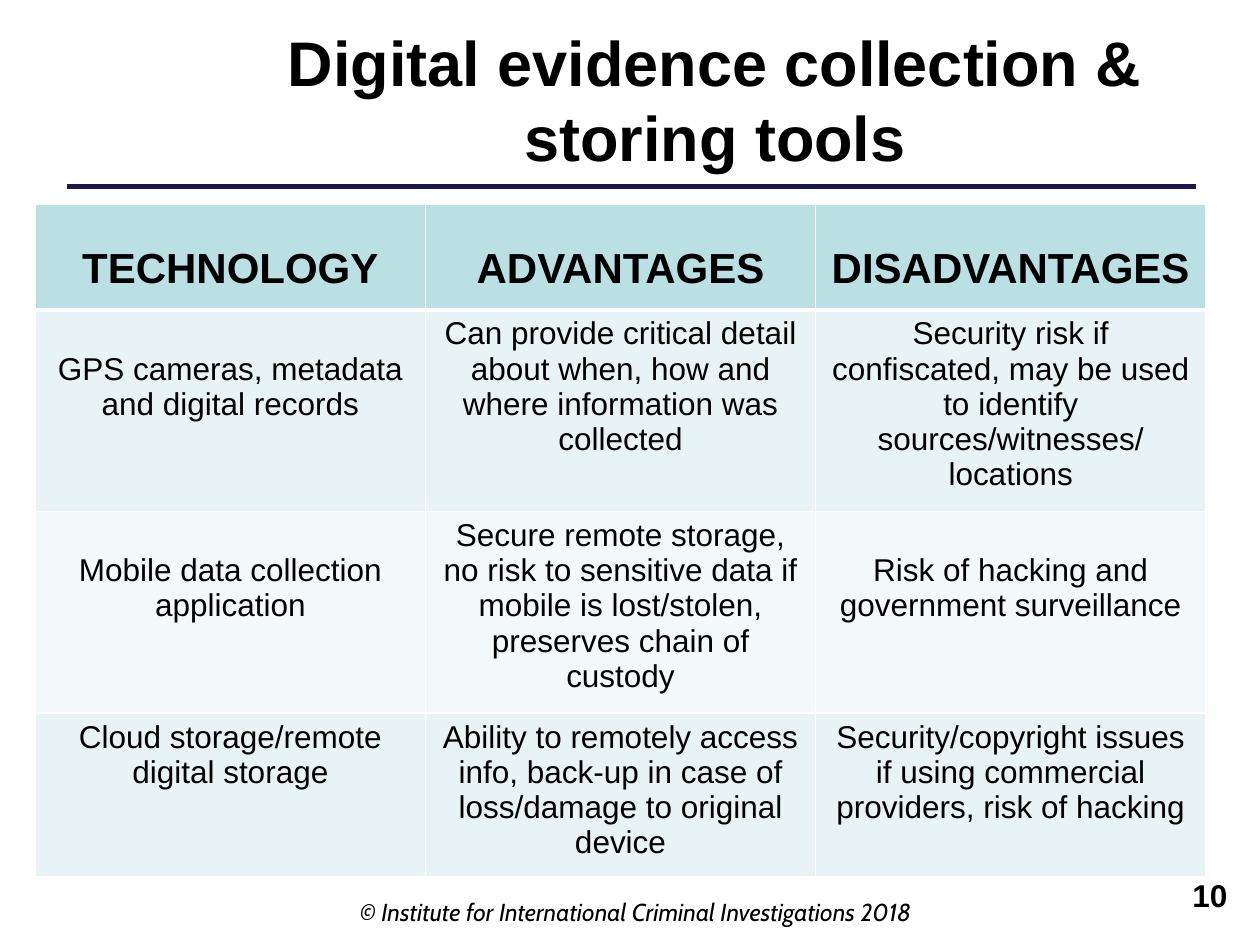
from dataclasses import dataclass

from lxml.etree import SubElement
from pptx import Presentation
from pptx.dml.color import RGBColor
from pptx.enum.shapes import MSO_CONNECTOR
from pptx.enum.text import MSO_ANCHOR, PP_ALIGN
from pptx.oxml.ns import qn
from pptx.util import Inches, Pt


@dataclass(frozen=True)
class Theme:
    font: str = "Arial"
    footer_font: str = "Cabin"
    text: str = "000000"
    rule: str = "19194D"
    border: str = "FFFFFF"
    header_fill: str = "BBE0E3"
    bands: tuple = ("E7F3F4", "F3F9FA")
    title_size: int = 36
    header_size: int = 24
    body_size: int = 18
    footer_size: int = 14


class SlideBuilder:
    def __init__(self, slide, theme):
        self.s = slide
        self.theme = theme

    def style(self, p, size, align=PP_ALIGN.CENTER, font=None, bold=False, italic=False):
        p.alignment = align
        p.font.name = font or self.theme.font
        p.font.size = Pt(size)
        p.font.bold = bold
        p.font.italic = italic
        p.font.color.rgb = RGBColor.from_string(self.theme.text)

    def title(self, text, left, top, width, height):
        sp = self.s.shapes.title
        sp.left, sp.top, sp.width, sp.height = map(Inches, (left, top, width, height))
        tf = sp.text_frame
        tf.text = text
        tf.word_wrap = True
        tf.vertical_anchor = MSO_ANCHOR.MIDDLE
        self.style(tf.paragraphs[0], self.theme.title_size, bold=True)

    def text(self, text, left, top, width, height, size, margin_top=0.05, **style):
        sp = self.s.shapes.add_textbox(*map(Inches, (left, top, width, height)))
        tf = sp.text_frame
        tf.text = text
        tf.word_wrap = True
        tf.margin_top = Inches(margin_top)
        self.style(tf.paragraphs[0], size, **style)

    def rule(self, left, right, y, weight):
        line = self.s.shapes.add_connector(
            MSO_CONNECTOR.STRAIGHT, Inches(left), Inches(y), Inches(right), Inches(y))
        line.line.color.rgb = RGBColor.from_string(self.theme.rule)
        line.line.width = Pt(weight)
        SubElement(line._element.spPr, qn("a:effectLst"))

    def borders(self, cell, top, bottom):
        tc_pr = cell._tc.get_or_add_tcPr()
        for side, weight in (("L", 1), ("R", 1), ("T", top), ("B", bottom)):
            ln = SubElement(tc_pr, qn(f"a:ln{side}"), w=str(Pt(weight)))
            fill = SubElement(ln, qn("a:solidFill"))
            SubElement(fill, qn("a:srgbClr"), val=self.theme.border)

    def table(self, rows, lowered, left, top, width, heights):
        th = self.theme
        cols = len(rows[0])
        frame = self.s.shapes.add_table(
            len(rows), cols, Inches(left), Inches(top), Inches(width), Inches(sum(heights)))
        table = frame.table
        for column in table.columns:
            column.width = Inches(width / cols)
        for i, (row, height) in enumerate(zip(rows, heights)):
            table.rows[i].height = Inches(height)
            header = i == 0
            for j, text in enumerate(row):
                cell = table.cell(i, j)
                cell.text = text
                # Lowered cells start one body line further down
                cell.margin_top = Inches(0.33 if (i, j) in lowered else 0.05)
                self.borders(cell, top=3 if i == 1 else 1, bottom=3 if header else 1)
                cell.fill.solid()
                color = th.header_fill if header else th.bands[(i - 1) % 2]
                cell.fill.fore_color.rgb = RGBColor.from_string(color)
                size = th.header_size if header else th.body_size
                self.style(cell.text_frame.paragraphs[0], size, bold=header)


ROWS = [
    ("TECHNOLOGY", "ADVANTAGES", "DISADVANTAGES"),
    ("GPS cameras, metadata and digital records",
     "Can provide critical detail about when, how and where information was collected",
     "Security risk if confiscated, may be used to identify sources/witnesses/ locations"),
    ("Mobile data collection application",
     "Secure remote storage, no risk to sensitive data if mobile is lost/stolen, "
     "preserves chain of custody",
     "Risk of hacking and government surveillance"),
    ("Cloud storage/remote digital storage",
     "Ability to remotely access info, back-up in case of loss/damage to original device",
     "Security/copyright issues if using commercial providers, risk of hacking"),
]
LOWERED = {(0, 0), (0, 1), (0, 2), (1, 0), (2, 0), (2, 2)}


def main():
    prs = Presentation()
    prs.slide_width, prs.slide_height = Inches(10), Inches(7.5)
    theme = Theme()
    slide = SlideBuilder(prs.slides.add_slide(prs.slide_layouts[5]), theme)

    # Heading and rule
    slide.rule(0.53, 9.49, 1.48, 2.5)
    slide.title("Digital evidence collection & storing tools", 1.54, 0.13, 8.27, 1.31)

    # Comparison of tools
    slide.table(ROWS, LOWERED, 0.28, 1.62, 9.29, (0.84, 1.6, 1.6, 1.3))

    # Footer and page number
    slide.text("© Institute for International Criminal Investigations 2018",
               2.72, 6.83, 4.65, 0.52, theme.footer_size, margin_top=0.29,
               font=theme.footer_font, italic=True)
    slide.text("10", 7.28, 6.9, 2.56, 0.52, theme.body_size,
               align=PP_ALIGN.RIGHT, bold=True)

    prs.save("out.pptx")


if __name__ == "__main__":
    main()
